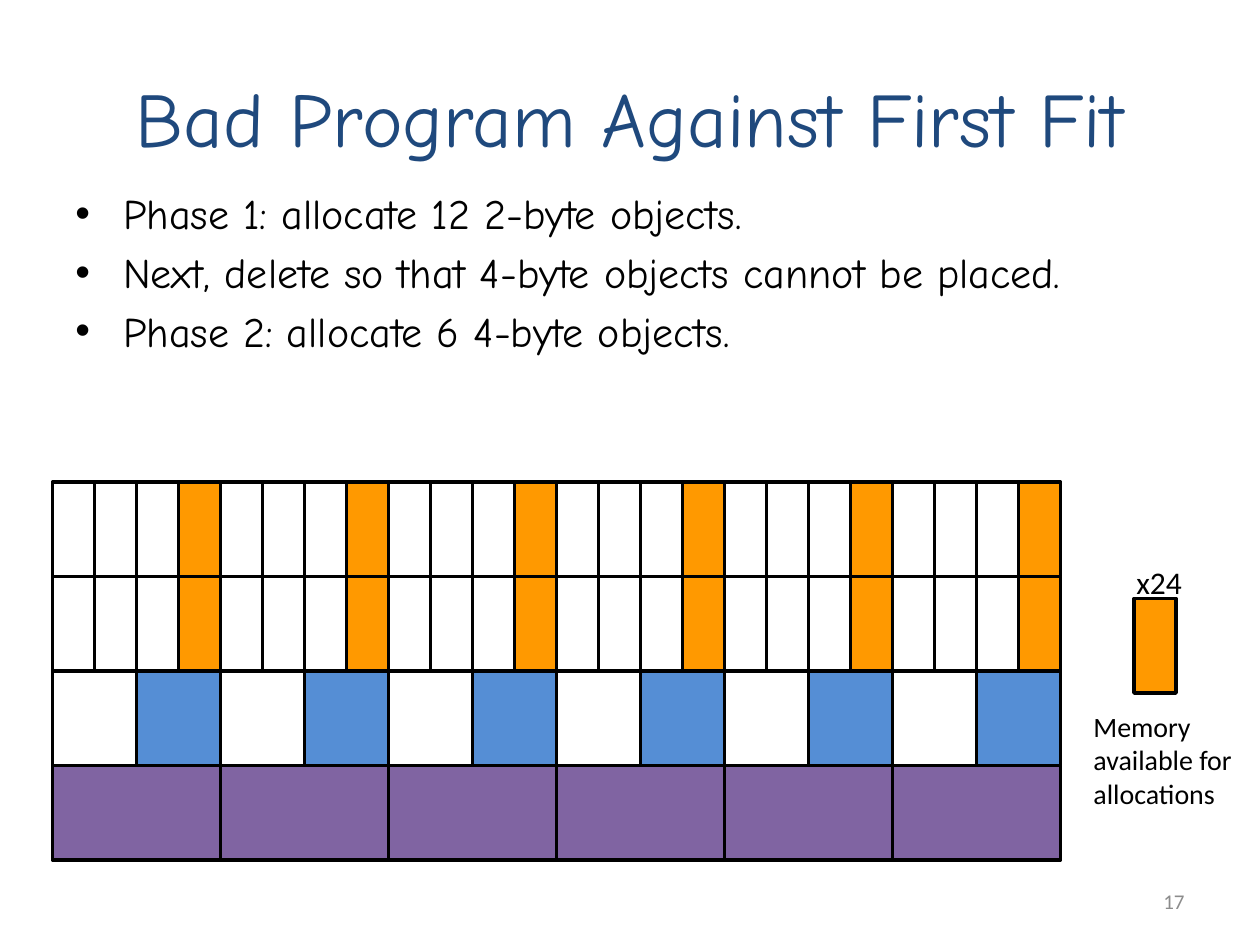
"""Builds the slide on a bad program against first fit allocation."""
import pptx
import pptx.dml.color
import pptx.enum.shapes
import pptx.enum.text
import pptx.oxml.ns
import pptx.util
import lxml.etree

WIDTH, HEIGHT = 10, 7.5
ALIGN = pptx.enum.text.PP_ALIGN
ANCHOR = pptx.enum.text.MSO_ANCHOR
HEADING_FONT, LABEL_FONT = "Comic Neue", "Calibri"
BLACK, WHITE, NAVY, GREY = "000000", "FFFFFF", "1F497D", "8C8C8C"
ORANGE, BLUE, PURPLE = "FF9900", "558ED5", "8064A2"

TITLE = "Bad Program Against First Fit"
PHASES = [
    "Phase 1: allocate 12 2-byte objects.",
    "Next, delete so that 4-byte objects cannot be placed.",
    "Phase 2: allocate 6 4-byte objects.",
]
BYTES_PER_ROW = 24
MEMORY_ROWS = [
    (1, [WHITE, WHITE, WHITE, ORANGE]),
    (1, [WHITE, WHITE, WHITE, ORANGE]),
    (2, [WHITE, BLUE]),
    (4, [PURPLE]),
]
GRID_LEFT, GRID_TOP = WIDTH / 24, HEIGHT * 0.51
BYTE_WIDTH, ROW_HEIGHT = WIDTH / 30, HEIGHT / 10


def color(value):
    """Turn a hex string into a colour."""
    return pptx.dml.color.RGBColor.from_string(value)


def inches(*lengths):
    """Turn numbers into lengths in inches."""
    return [pptx.util.Inches(length) for length in lengths]


def add_text(slide, box, lines, size, font, hue, align=ALIGN.LEFT, anchor=ANCHOR.TOP, wrap=True):
    """Add a text box with one paragraph per line and return its paragraphs."""
    frame = slide.shapes.add_textbox(*inches(*box)).text_frame
    frame.word_wrap = wrap
    frame.vertical_anchor = anchor
    for index, line in enumerate(lines):
        paragraph = frame.add_paragraph() if index else frame.paragraphs[0]
        paragraph.alignment = align
        run = paragraph.add_run()
        run.text = line
        run.font.size = pptx.util.Pt(size)
        run.font.name = font
        run.font.color.rgb = color(hue)
    return frame.paragraphs


def add_bullet(paragraph):
    """Give a paragraph a hanging bullet and space before it."""
    properties = paragraph._p.get_or_add_pPr()
    indent = pptx.util.Inches(0.38)
    properties.set("marL", str(indent))
    properties.set("indent", str(-indent))
    qualify = pptx.oxml.ns.qn
    spacing = lxml.etree.SubElement(properties, qualify("a:spcBef"))
    lxml.etree.SubElement(spacing, qualify("a:spcPct")).set("val", "20000")
    lxml.etree.SubElement(properties, qualify("a:buFont")).set("typeface", "Arial")
    lxml.etree.SubElement(properties, qualify("a:buChar")).set("char", "•")


def add_block(slide, left, top, byte_count, fill):
    """Add an outlined block of memory."""
    box = inches(left, top, byte_count * BYTE_WIDTH, ROW_HEIGHT)
    shape = slide.shapes.add_shape(pptx.enum.shapes.MSO_SHAPE.RECTANGLE, *box)
    shape.shadow.inherit = False
    shape.fill.solid()
    shape.fill.fore_color.rgb = color(fill)
    shape.line.color.rgb = color(BLACK)
    shape.line.width = pptx.util.Pt(2)


def main():
    """Build and save the slide."""
    presentation = pptx.Presentation()
    presentation.slide_width, presentation.slide_height = inches(WIDTH, HEIGHT)
    slide = presentation.slides.add_slide(presentation.slide_layouts[6])

    add_text(slide, (0.5, 0.3, 9, 1.25), [TITLE], 44, HEADING_FONT, NAVY, ALIGN.CENTER, ANCHOR.MIDDLE)
    for paragraph in add_text(slide, (0.5, 1.44, 9, 1.99), PHASES, 24, HEADING_FONT, BLACK):
        add_bullet(paragraph)
    add_text(slide, (7.17, 6.95, 2.33, 0.4), ["17"], 12, LABEL_FONT, GREY, ALIGN.RIGHT, ANCHOR.MIDDLE)

    for row, (byte_count, fills) in enumerate(MEMORY_ROWS):
        for index in range(BYTES_PER_ROW // byte_count):
            left = GRID_LEFT + index * byte_count * BYTE_WIDTH
            add_block(slide, left, GRID_TOP + row * ROW_HEIGHT, byte_count, fills[index % len(fills)])

    add_block(slide, 9, 4.75, 1, ORANGE)
    add_text(slide, (8.92, 4.42, 0.58, 0.4), ["x24"], 18, LABEL_FONT, BLACK, wrap=False)
    add_text(slide, (8.58, 5.58, 1.33, 0.91), ["Memory available for allocations"], 16, LABEL_FONT, BLACK)
    presentation.save("out.pptx")


if __name__ == "__main__":
    main()
